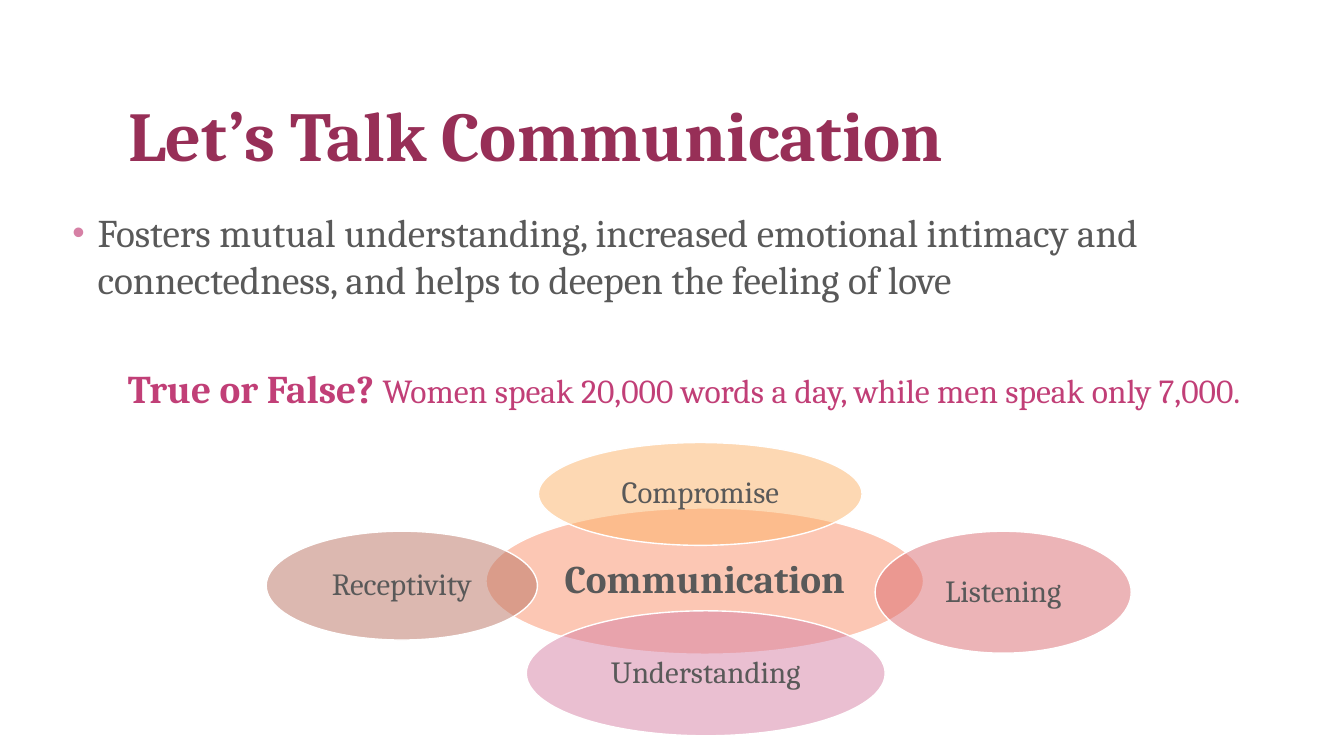
from lxml import etree
from pptx import Presentation
from pptx import util as u
from pptx.dml.color import RGBColor
from pptx.enum import shapes, text
from pptx.oxml.ns import qn

PX = 9144
FONT = "Cambria"
GREY = "595959"
OVALS = [
    ("Communication", (482, 504, 434, 145), "FA906A", 28, True),
    ("Compromise", (534, 439, 321, 102), "FCB268", 22, False),
    ("Listening", (868, 527, 254, 121), "DB6B70", 22, False),
    ("Understanding", (522, 606, 356, 124), "D680A5", 22, False),
    ("Receptivity", (264, 527, 269, 108), "BA7362", 22, False),
]


def px(*lengths):
    return [u.Emu(length * PX) for length in lengths]


def colour(value):
    return RGBColor.from_string(value)


def apply(target, values):
    for name, value in values.items():
        setattr(target, name, value)


def add_span(para, words, size, shade, bold=False):
    span = para.add_run()
    span.text = words
    apply(span.font, {"name": FONT, "size": u.Pt(size), "bold": bold})
    span.font.color.rgb = colour(shade)


def add_bullet(para, shade, percent, indent):
    props = para._p.get_or_add_pPr()
    props.set("marL", str(indent * PX))
    props.set("indent", str(-indent * PX))
    holder = etree.SubElement(props, qn("a:buClr"))
    etree.SubElement(holder, qn("a:srgbClr"), val=shade)
    etree.SubElement(props, qn("a:buSzPct"), val=str(percent * 1000))
    etree.SubElement(props, qn("a:buFont"), typeface="Arial")
    etree.SubElement(props, qn("a:buChar"), char="•")


def add_title(page, box):
    title = page.shapes.title
    apply(title, dict(zip(("left", "top", "width", "height"), px(*box))))
    frame = title.text_frame
    apply(frame, {"word_wrap": True, "auto_size": text.MSO_AUTO_SIZE.NONE,
                  "vertical_anchor": text.MSO_ANCHOR.BOTTOM})
    para = frame.paragraphs[0]
    apply(para, {"alignment": text.PP_ALIGN.LEFT, "line_spacing": 0.9})
    add_span(para, "Let’s Talk Communication", 50, "972F57", True)


def add_body(page, box):
    frame = page.shapes.add_textbox(*px(*box)).text_frame
    frame.word_wrap = True
    point = frame.paragraphs[0]
    add_bullet(point, "D680A5", 90, 25)
    add_span(point, "Fosters mutual understanding, increased emotional intimacy and "
                    "connectedness, and helps to deepen the feeling of love", 28, GREY)
    question = frame.add_paragraph()
    apply(question, {"alignment": text.PP_ALIGN.CENTER, "line_spacing": 0.9,
                     "space_before": u.Pt(48)})
    add_span(question, "True or False? ", 28, "C13F77", True)
    add_span(question, "Women speak 20,000 words a day, while men speak only 7,000.",
             24, "C13F77")


def add_oval(page, box, label, fill, size, bold):
    oval = page.shapes.add_shape(shapes.MSO_SHAPE.OVAL, *px(*box))
    oval.shadow.inherit = False
    oval.fill.solid()
    oval.fill.fore_color.rgb = colour(fill)
    shade = oval.fill._xPr.find(qn("a:solidFill"))[0]
    etree.SubElement(shade, qn("a:alpha"), val="50000")
    oval.line.color.rgb = colour("FFFFFF")
    oval.line.width = u.Pt(1)
    frame = oval.text_frame
    inset = px(3)[0]
    apply(frame, {"word_wrap": True, "vertical_anchor": text.MSO_ANCHOR.MIDDLE,
                  "margin_left": inset, "margin_right": inset,
                  "margin_top": inset, "margin_bottom": inset})
    para = frame.paragraphs[0]
    apply(para, {"alignment": text.PP_ALIGN.CENTER, "line_spacing": 0.9})
    add_span(para, label, size, GREY, bold)


def main():
    deck = Presentation()
    deck.slide_width, deck.slide_height = px(1333, 750)
    page = deck.slides.add_slide(deck.slide_layouts.get_by_name("Title Only"))
    add_title(page, (117, 50, 1100, 130))
    add_body(page, (62, 202, 1233, 325))
    for label, box, fill, size, bold in OVALS:
        add_oval(page, box, label, fill, size, bold)
    deck.save("out.pptx")


if __name__ == "__main__":
    main()
